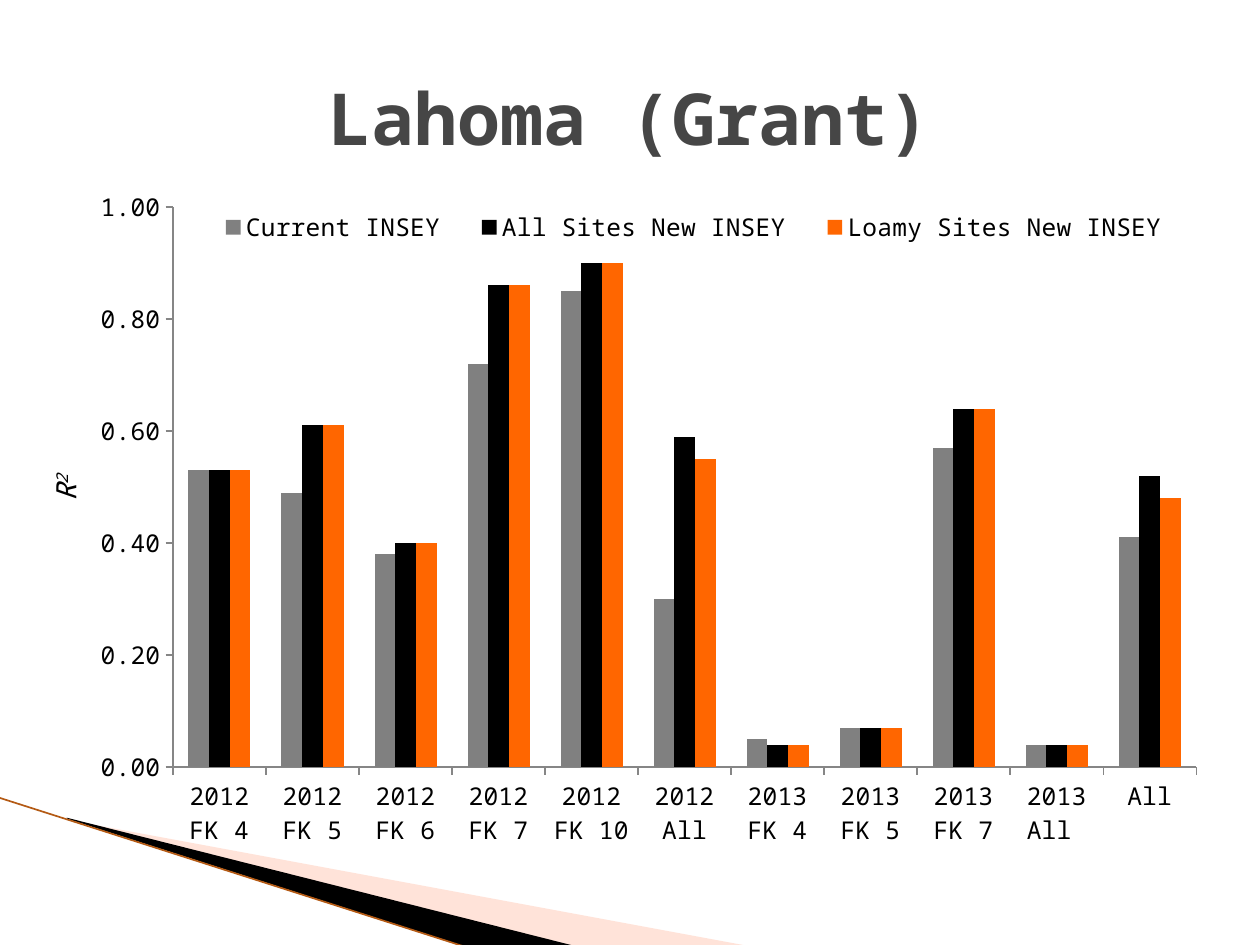
from lxml.etree import SubElement
from pptx import Presentation
from pptx.chart.data import CategoryChartData
from pptx.dml.color import RGBColor
from pptx.enum.chart import XL_CHART_TYPE as ChartType, XL_LEGEND_POSITION as LegendPos, XL_TICK_MARK as Tick
from pptx.enum.shapes import MSO_CONNECTOR as Connector
from pptx.enum.text import MSO_ANCHOR as Anchor, MSO_AUTO_SIZE as AutoSize, PP_ALIGN as Align
from pptx.oxml import parse_xml
from pptx.oxml.ns import nsdecls, qn
from pptx.util import Inches, Pt

WIDTH, HEIGHT = Inches(10), Inches(7.5)
FONT = "Noto Sans Mono"
COLORS = {
    "title": "464646", "text": "000000", "axis": "868686",
    "pale": "FFBAA2", "dark": "000000", "edge": "B45A14",
    "current": "808080", "all_sites": "000000", "loamy": "FF6600",
}
CATEGORIES = ["2012 FK 4", "2012 FK 5", "2012 FK 6", "2012 FK 7", "2012 FK 10", "2012 All",
              "2013 FK 4", "2013 FK 5", "2013 FK 7", "2013 All ", "All"]
SERIES = [
    ("Current INSEY", "current",
     (0.53, 0.49, 0.38, 0.72, 0.85, 0.3, 0.05, 0.07, 0.57, 0.04, 0.41)),
    ("All Sites New INSEY", "all_sites",
     (0.53, 0.61, 0.4, 0.86, 0.9, 0.59, 0.04, 0.07, 0.64, 0.04, 0.52)),
    ("Loamy Sites New INSEY", "loamy",
     (0.53, 0.61, 0.4, 0.86, 0.9, 0.55, 0.04, 0.07, 0.64, 0.04, 0.48)),
]


def color(name):
    return RGBColor.from_string(COLORS[name])


def share(x, y):
    return int(WIDTH * x / 100), int(HEIGHT * y / 100)


def area(x, y, width, height):
    return *share(x, y), *share(width, height)


def style_font(font, size, tint="text", bold=False, italic=False):
    font.name, font.size, font.bold, font.italic = FONT, Pt(size), bold, italic
    font.color.rgb = color(tint)


def add_text(paragraph, text, raised=0, **style):
    run = paragraph.add_run()
    run.text = text
    paragraph.alignment = Align.CENTER
    style_font(run.font, **style)
    if raised:
        run._r.get_or_add_rPr().set("baseline", str(raised * 1000))


def add_wedge(slide, corners, tint, opacity=100):
    start, *others = [share(x, y) for x, y in corners]
    builder = slide.shapes.build_freeform(*start)
    builder.add_line_segments(others, close=True)
    wedge = builder.convert_to_shape()
    wedge.shadow.inherit = False
    wedge.fill.solid()
    wedge.fill.fore_color.rgb = color(tint)
    wedge.line.fill.background()
    if opacity < 100:
        fill = wedge._element.spPr.find(qn("a:solidFill"))
        SubElement(fill[0], qn("a:alpha")).set("val", str(opacity * 1000))


def add_edge(slide, start, end):
    edge = slide.shapes.add_connector(Connector.STRAIGHT, *share(*start), *share(*end))
    edge.line.color.rgb = color("edge")
    edge.line.width = Pt(0.95)
    SubElement(edge._element.spPr, qn("a:effectLst"))


def manual_layout(x, y, width, height, inner=False):
    target = '<c:layoutTarget val="inner"/>' if inner else ""
    return parse_xml(
        f'<c:layout {nsdecls("c")}><c:manualLayout>{target}'
        '<c:xMode val="edge"/><c:yMode val="edge"/>'
        f'<c:x val="{x}"/><c:y val="{y}"/><c:w val="{width}"/><c:h val="{height}"/>'
        '</c:manualLayout></c:layout>')


def drop_layout(element):
    for layout in element.findall(qn("c:layout")):
        element.remove(layout)


def style_axis(axis):
    axis.has_major_gridlines = False
    axis.major_tick_mark, axis.minor_tick_mark = Tick.OUTSIDE, Tick.NONE
    axis.format.line.color.rgb = color("axis")
    axis.format.line.width = Pt(0.75)
    style_font(axis.tick_labels.font, 14)


def add_legend(chart):
    chart.has_legend = True
    legend = chart.legend
    legend.position = LegendPos.RIGHT
    legend.include_in_layout = False
    style_font(legend.font, 14)
    drop_layout(legend._element)
    legend._element.find(qn("c:legendPos")).addnext(manual_layout(0.12, 0.05, 0.86, 0.06))


def add_r2_chart(slide):
    data = CategoryChartData(number_format="0.00")
    data.categories = CATEGORIES
    for name, _, values in SERIES:
        data.add_series(name, values)
    chart = slide.shapes.add_chart(
        ChartType.COLUMN_CLUSTERED, *area(4.2, 17.73, 92.5, 78.93), data).chart
    chart.has_title = False
    style_font(chart.font, 18)

    plot = chart.plots[0]
    plot.gap_width, plot.overlap, plot.vary_by_categories = 150, 0, False
    for series, (_, tint, _) in zip(plot.series, SERIES):
        series.format.fill.solid()
        series.format.fill.fore_color.rgb = color(tint)

    style_axis(chart.category_axis)
    r2_axis = chart.value_axis
    style_axis(r2_axis)
    r2_axis.minimum_scale, r2_axis.maximum_scale, r2_axis.major_unit = 0, 1, 0.2
    r2_axis.tick_labels.number_format = "#,##0.00"
    r2_axis.tick_labels.number_format_is_linked = False

    add_legend(chart)
    plot_area = chart._chartSpace.chart.plotArea
    drop_layout(plot_area)
    plot_area.insert(0, manual_layout(0.103, 0.053, 0.878, 0.751, inner=True))


def add_title(slide, text):
    title = slide.shapes.title
    title.left, title.top, title.width, title.height = area(5, 4, 90, 16.67)
    title.text_frame.vertical_anchor = Anchor.MIDDLE
    add_text(title.text_frame.paragraphs[0], text, size=41, tint="title", bold=True)


def add_axis_label(slide):
    label = slide.shapes.add_textbox(*area(-17.7, 49.2, 45.8, 4.93))
    label.rotation = 270
    label.text_frame.word_wrap = True
    label.text_frame.auto_size = AutoSize.SHAPE_TO_FIT_TEXT
    paragraph = label.text_frame.paragraphs[0]
    add_text(paragraph, "R", size=16, italic=True)
    add_text(paragraph, "2", raised=30, size=16, italic=True)


def main():
    deck = Presentation()
    deck.slide_width, deck.slide_height = WIDTH, HEIGHT
    slide = deck.slides.add_slide(deck.slide_layouts.get_by_name("Title Only"))
    add_wedge(slide, [(5.5, 86.8), (59.5, 100.13), (45.6, 100.13), (5.5, 86.67)], "pale", 40)
    add_wedge(slide, [(5.3, 86.53), (45.7, 100.13), (37.2, 100.27), (5.4, 86.67)], "dark")
    add_edge(slide, (-0.1, 84.4), (37.1, 100.27))
    add_r2_chart(slide)
    add_title(slide, "Lahoma (Grant)")
    add_axis_label(slide)
    deck.save("out.pptx")


if __name__ == "__main__":
    main()
